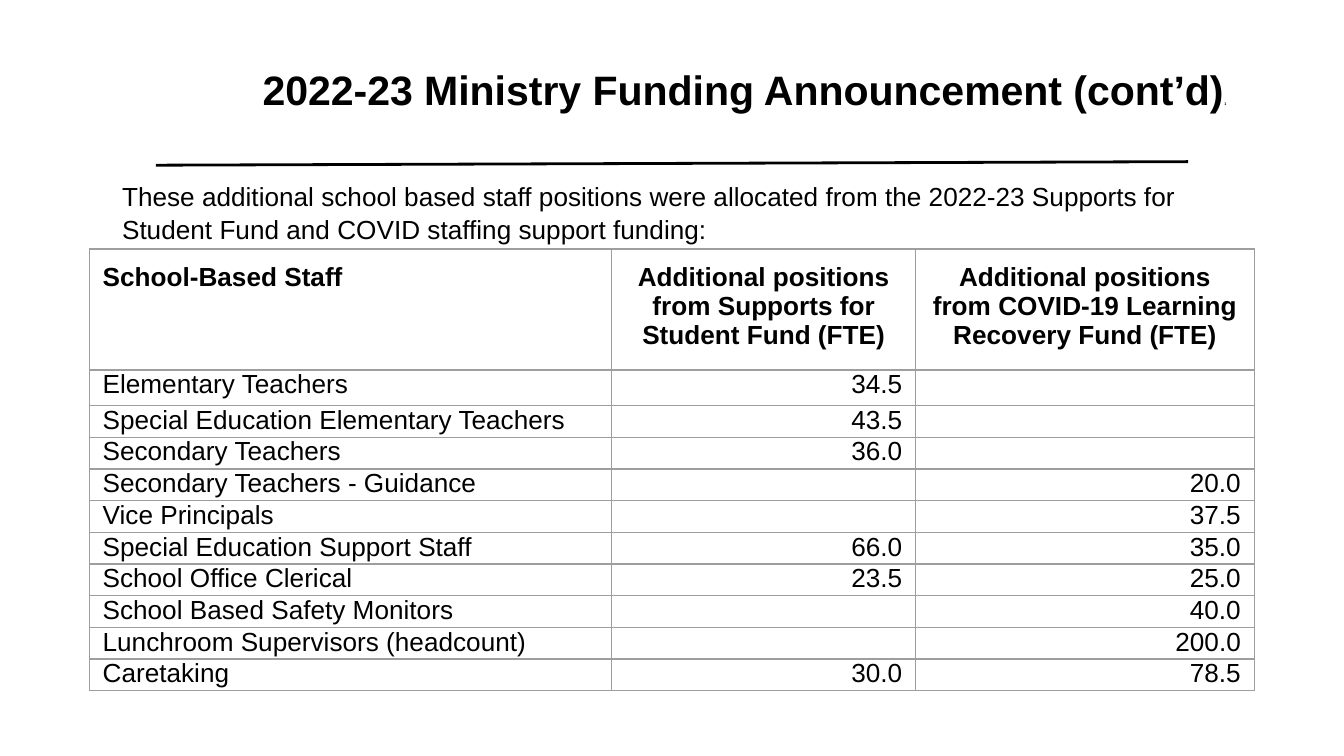
from lxml.etree import SubElement
from pptx import Presentation
from pptx.dml.color import RGBColor
from pptx.enum.shapes import MSO_CONNECTOR as Connector
from pptx.enum.text import MSO_ANCHOR as Anchor, MSO_AUTO_SIZE as AutoSize, PP_ALIGN as Align
from pptx.oxml.ns import qn
from pptx.util import Pt

COLORS = {"text": "000000", "rule": "000000", "border": "9E9E9E"}
FONT = "Arial"
INSET = 7.2
BODY_SIZE = 14
COLUMN_WIDTHS = [280, 162.8, 181.4]
HEADER_HEIGHT, FIRST_ROW_HEIGHT, ROW_HEIGHT = 64.3, 19, 17

HEADINGS = [
    "School-Based Staff",
    "Additional positions from Supports for Student Fund (FTE)",
    "Additional positions from COVID-19 Learning Recovery Fund (FTE)",
]
POSITIONS = [
    ("Elementary Teachers", "34.5", ""),
    ("Special Education Elementary Teachers", "43.5", ""),
    ("Secondary Teachers", "36.0", ""),
    ("Secondary Teachers - Guidance", "", "20.0"),
    ("Vice Principals", "", "37.5"),
    ("Special Education Support Staff", "66.0", "35.0"),
    ("School Office Clerical", "23.5", "25.0"),
    ("School Based Safety Monitors", "", "40.0"),
    ("Lunchroom Supervisors (headcount)", "", "200.0"),
    ("Caretaking", "30.0", "78.5"),
]


def color(name):
    return RGBColor.from_string(COLORS[name])


def add_text(paragraph, text, size=BODY_SIZE, bold=False, align=Align.LEFT, spacing=1.0):
    paragraph.alignment = align
    paragraph.line_spacing = spacing
    if not text:
        SubElement(paragraph._p, qn("a:endParaRPr"), sz=str(size * 100))
        return
    run = paragraph.add_run()
    run.text = text
    run.font.name = FONT
    run.font.size = Pt(size)
    run.font.bold = bold
    run.font.color.rgb = color("text")


def set_insets(target, horizontal, vertical):
    target.margin_left = target.margin_right = Pt(horizontal)
    target.margin_top = target.margin_bottom = Pt(vertical)


def place_title(slide, left, top, width, height):
    title = slide.shapes.title
    title.left, title.top, title.width, title.height = map(Pt, (left, top, width, height))
    frame = title.text_frame
    frame.word_wrap = True
    frame.auto_size = AutoSize.NONE
    frame.vertical_anchor = Anchor.MIDDLE
    set_insets(frame, INSET, INSET)
    paragraph = frame.paragraphs[0]
    add_text(paragraph, "2022-23 Ministry Funding Announcement (cont’d)",
             size=22, bold=True, align=Align.CENTER)
    add_text(paragraph, "1", size=2, bold=True, align=Align.CENTER)


def add_rule(slide, left, top, width, height):
    rule = slide.shapes.add_connector(
        Connector.STRAIGHT, Pt(left), Pt(top + height), Pt(left + width), Pt(top))
    rule.line.color.rgb = color("rule")
    rule.line.width = Pt(1.5)
    SubElement(rule._element.spPr, qn("a:effectLst"))


def add_intro(slide, left, top, width, height):
    frame = slide.shapes.add_textbox(*map(Pt, (left, top, width, height))).text_frame
    frame.word_wrap = True
    frame.auto_size = AutoSize.SHAPE_TO_FIT_TEXT
    set_insets(frame, INSET, INSET)
    add_text(frame.paragraphs[0],
             "These additional school based staff positions were allocated from the 2022-23 "
             "Supports for Student Fund and COVID staffing support funding:", spacing=1.05)


def add_borders(cell):
    properties = cell._tc.get_or_add_tcPr()
    for side in ("lnL", "lnR", "lnT", "lnB"):
        line = SubElement(properties, qn(f"a:{side}"), w=str(Pt(0.75)))
        fill = SubElement(line, qn("a:solidFill"))
        SubElement(fill, qn("a:srgbClr"), val=COLORS["border"])


def add_positions_table(slide, left, top):
    rows = [HEADINGS, *POSITIONS]
    heights = [HEADER_HEIGHT, FIRST_ROW_HEIGHT] + [ROW_HEIGHT] * (len(rows) - 2)
    table = slide.shapes.add_table(
        len(rows), len(HEADINGS), Pt(left), Pt(top),
        Pt(sum(COLUMN_WIDTHS)), Pt(sum(heights))).table
    table.first_row = table.horz_banding = False
    for column, width in zip(table.columns, COLUMN_WIDTHS):
        column.width = Pt(width)
    for row_index, (values, height) in enumerate(zip(rows, heights)):
        table.rows[row_index].height = Pt(height)
        header = row_index == 0
        for column_index, value in enumerate(values):
            cell = table.cell(row_index, column_index)
            set_insets(cell, INSET, INSET if header else 0)
            add_borders(cell)
            cell.fill.background()
            number_align = Align.CENTER if header else Align.RIGHT
            add_text(cell.text_frame.paragraphs[0], value, bold=header,
                     align=number_align if column_index else Align.LEFT)


def main():
    presentation = Presentation()
    presentation.slide_width, presentation.slide_height = Pt(720), Pt(405)
    slide = presentation.slides.add_slide(presentation.slide_layouts[5])
    place_title(slide, 116.6, 9.4, 564.5, 76.3)
    add_rule(slide, 83.5, 86.6, 553, 1.9)
    add_intro(slide, 58.3, 88.6, 603.4, 48.2)
    add_positions_table(slide, 47.8, 133.4)
    presentation.save("out.pptx")


if __name__ == "__main__":
    main()
